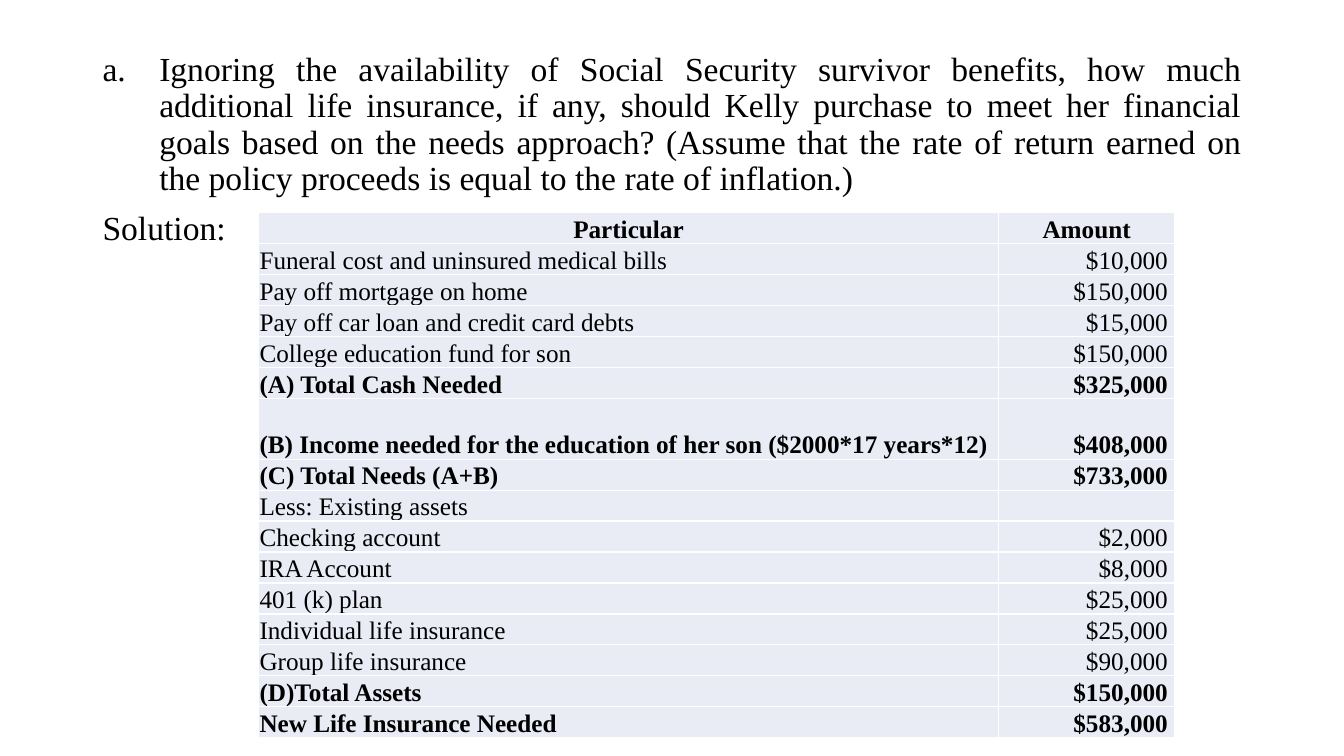
from lxml.etree import SubElement
from pptx import Presentation
from pptx.dml.color import RGBColor
from pptx.enum.text import MSO_ANCHOR as Anchor, MSO_AUTO_SIZE as Fit, PP_ALIGN as Align
from pptx.oxml.ns import qn
from pptx.util import Cm, Pt

ITEMS = [
    ("Particular", "Amount"),
    ("Funeral cost and uninsured medical bills", "$10,000 "),
    ("Pay off mortgage on home", "$150,000 "),
    ("Pay off car loan and credit card debts", "$15,000 "),
    ("College education fund for son", "$150,000 "),
    ("(A) Total Cash Needed", "$325,000 "),
    ("(B) Income needed for the education of her son ($2000*17 years*12)", "$408,000 "),
    ("(C) Total Needs (A+B)", "$733,000 "),
    ("Less: Existing assets", ""),
    ("Checking account", "$2,000 "),
    ("IRA Account", "$8,000 "),
    ("401 (k) plan", "$25,000 "),
    ("Individual life insurance", "$25,000 "),
    ("Group life insurance", "$90,000 "),
    ("(D)Total Assets", "$150,000 "),
    ("New Life Insurance Needed", "$583,000 "),
]
TOTALS = {0, 5, 6, 7, 14, 15}
TALL = 6
QUERY = (
    "Ignoring the availability of Social Security survivor benefits, how much "
    "additional life insurance, if any, should Kelly purchase to meet her financial "
    "goals based on the needs approach? (Assume that the rate of return earned on "
    "the policy proceeds is equal to the rate of inflation.) "
)


def color(code):
    return RGBColor.from_string(code)


class Deck:
    face = "Times New Roman"
    ink = "000000"
    tint = "E9EBF5"
    rule = "FFFFFF"

    def __init__(self):
        self.file = Presentation()
        self.file.slide_width = Cm(33.87)
        self.file.slide_height = Cm(19.05)
        self.slide = self.file.slides.add_slide(self.file.slide_layouts[1])
        title = self.slide.shapes.title.element
        title.getparent().remove(title)

    def font(self, para, size, bold=False):
        for run in para.runs or [para.add_run()]:
            run.font.name = self.face
            run.font.size = Pt(size)
            run.font.bold = bold
            run.font.color.rgb = color(self.ink)

    def body(self, box, query, label):
        shape = self.slide.placeholders[1]
        shape.left, shape.top, shape.width, shape.height = map(Cm, box)
        frame = shape.text_frame
        frame.word_wrap = True
        frame.auto_size = Fit.NONE
        frame.vertical_anchor = Anchor.TOP
        frame.text = query
        first = frame.paragraphs[0]
        last = frame.add_paragraph()
        last.text = label
        for para, dent in ((first, 1.43), (last, 0)):
            prop = para._p.get_or_add_pPr()
            prop.set("marL", str(Cm(dent)))
            prop.set("indent", str(-Cm(dent)))
            if dent:
                SubElement(prop, qn("a:buAutoNum"), type="alphaLcPeriod")
            else:
                SubElement(prop, qn("a:buNone"))
            para.alignment = Align.JUSTIFY
            para.line_spacing = 0.9
            para.space_before = Pt(10 if para is last else 0)
            self.font(para, 24)

    def edges(self, cell):
        prop = cell._tc.get_or_add_tcPr()
        for side in ("lnL", "lnR", "lnT", "lnB"):
            line = SubElement(prop, qn("a:" + side), w=str(Pt(1)))
            fill = SubElement(line, qn("a:solidFill"))
            SubElement(fill, qn("a:srgbClr"), val=self.rule)

    def cell(self, cell, text, align, bold):
        self.edges(cell)
        cell.fill.solid()
        cell.fill.fore_color.rgb = color(self.tint)
        cell.margin_left = cell.margin_right = cell.margin_top = Cm(0.02)
        cell.margin_bottom = 0
        cell.vertical_anchor = Anchor.BOTTOM
        para = cell.text_frame.paragraphs[0]
        para.text = text
        para.alignment = align
        self.font(para, 18, bold)

    def table(self, left, top, widths, low, high):
        tall = low * (len(ITEMS) - 1) + high
        grid = self.slide.shapes.add_table(
            len(ITEMS), len(widths), Cm(left), Cm(top), Cm(sum(widths)), Cm(tall)
        ).table
        grid.first_row = grid.horz_banding = False
        for col, width in zip(grid.columns, widths):
            col.width = Cm(width)
        for row, pair in enumerate(ITEMS):
            grid.rows[row].height = Cm(high if row == TALL else low)
            for col, text in enumerate(pair):
                side = Align.RIGHT if col else Align.LEFT
                align = side if row else Align.CENTER
                self.cell(grid.cell(row, col), text, align, row in TOTALS)


def main():
    deck = Deck()
    deck.body((2.33, 1.2, 29.21, 15.98), QUERY, "Solution: ")
    deck.table(6.52, 5.36, (18.64, 4.45), 0.78, 1.53)
    deck.file.save("out.pptx")


if __name__ == "__main__":
    main()
